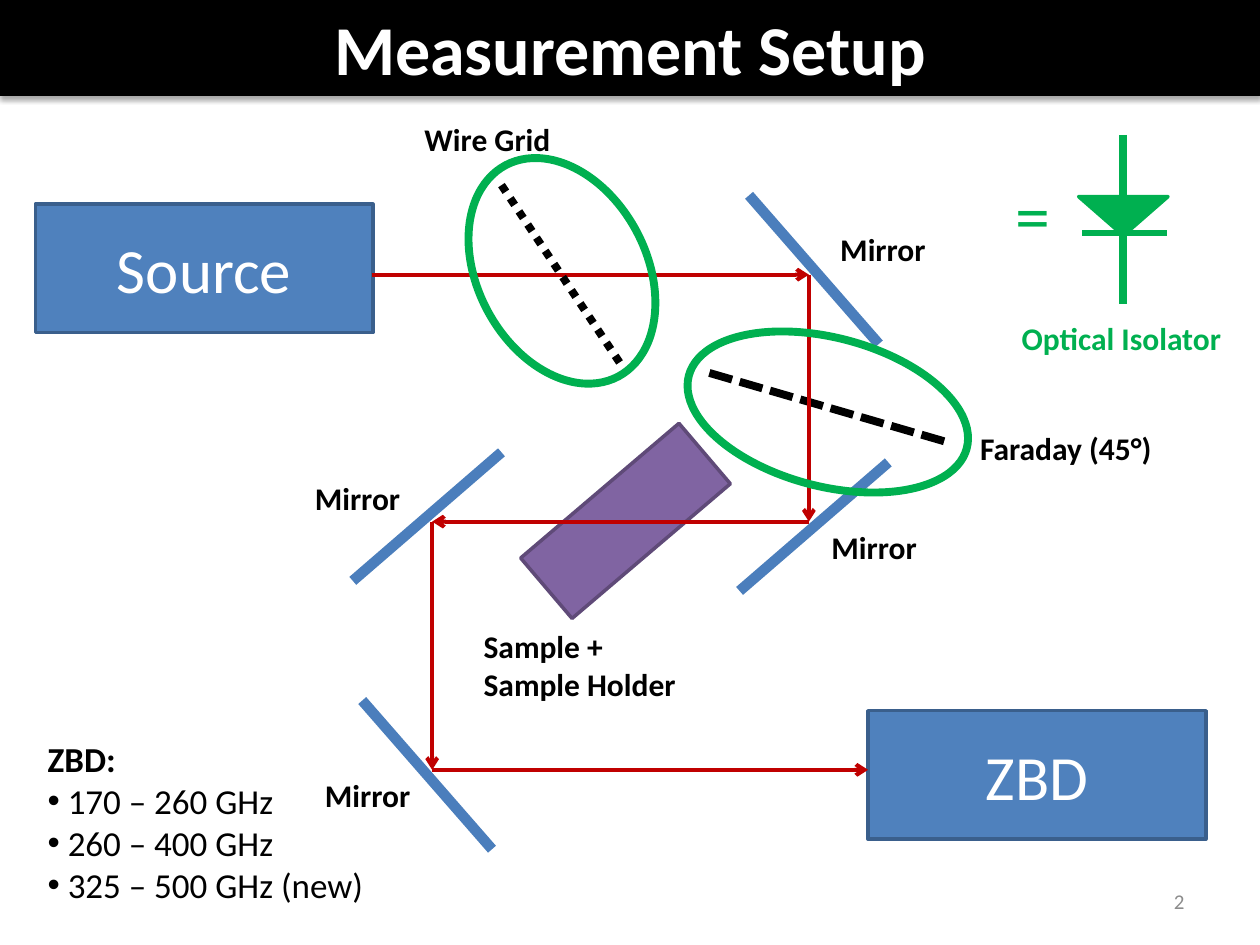
from dataclasses import dataclass

from lxml.etree import SubElement
from pptx import Presentation
from pptx.dml.color import RGBColor
from pptx.enum.dml import MSO_LINE_DASH_STYLE as DASH
from pptx.enum.shapes import MSO_CONNECTOR, MSO_SHAPE
from pptx.enum.text import MSO_ANCHOR as ANCHOR, PP_ALIGN as ALIGN
from pptx.oxml.ns import qn
from pptx.util import Inches, Pt

BLACK = RGBColor(0x00, 0x00, 0x00)
WHITE = RGBColor(0xFF, 0xFF, 0xFF)
GRAY = RGBColor(0x8C, 0x8C, 0x8C)
BLUE = RGBColor(0x4F, 0x81, 0xBD)
BLUE_EDGE = RGBColor(0x3A, 0x5F, 0x8C)
MIRROR_BLUE = RGBColor(0x4B, 0x7E, 0xBC)
PURPLE = RGBColor(0x80, 0x64, 0xA2)
PURPLE_EDGE = RGBColor(0x5F, 0x4A, 0x78)
RED = RGBColor(0xC0, 0x00, 0x00)
GREEN = RGBColor(0x00, 0xB0, 0x50)

FONT = "Calibri"
COLUMNS, ROWS = 100, 75
CELL = Inches(10) // COLUMNS


@dataclass
class Region:
    """A box on the slide grid; its parts are placed from its top left corner."""
    slide: object
    left: float
    top: float
    width: float
    height: float

    def point(self, x, y):
        return round((self.left + x) * CELL), round((self.top + y) * CELL)

    def place(self, box):
        x, y, width, height = box
        return *self.point(x, y), round(width * CELL), round(height * CELL)


def add_run(paragraph, text, size, color, bold=False):
    run = paragraph.add_run()
    run.text = text
    run.font.name, run.font.size, run.font.bold = FONT, Pt(size), bold
    run.font.color.rgb = color


def add_block(region, kind, box, fill, edge, weight=2, rotation=0):
    shape = region.slide.shapes.add_shape(kind, *region.place(box))
    shape.shadow.inherit = False
    shape.rotation = rotation
    if fill is None:
        shape.fill.background()
    else:
        shape.fill.solid()
        shape.fill.fore_color.rgb = fill
    shape.line.color.rgb = edge
    shape.line.width = Pt(weight)
    return shape


def add_caption(shape, text, size, bold=False):
    shape.text_frame.vertical_anchor = ANCHOR.MIDDLE
    paragraph = shape.text_frame.paragraphs[0]
    paragraph.alignment = ALIGN.CENTER
    add_run(paragraph, text, size, WHITE, bold)


def add_line(region, start, end, color, weight, dash=None, arrow=False):
    line = region.slide.shapes.add_connector(
        MSO_CONNECTOR.STRAIGHT, *region.point(*start), *region.point(*end))
    line.line.color.rgb = color
    line.line.width = Pt(weight)
    if dash is not None:
        line.line.dash_style = dash
    properties = line._element.spPr
    if arrow:
        SubElement(properties.find(qn("a:ln")), qn("a:tailEnd"), type="arrow")
    SubElement(properties, qn("a:effectLst"))


def add_label(region, box, lines, size=18, color=BLACK, bold=True):
    frame = region.slide.shapes.add_textbox(*region.place(box)).text_frame
    frame.word_wrap = False
    for index, text in enumerate(lines):
        paragraph = frame.add_paragraph() if index else frame.paragraphs[0]
        add_run(paragraph, text, size, color, bold)
    return frame


def build_beam_path(region):
    # Source and detector
    for text, x, y in (("Source", 0, 7.2), ("ZBD", 66.1, 47.4)):
        block = add_block(region, MSO_SHAPE.RECTANGLE, (x, y, 26.8, 10.2), BLUE, BLUE_EDGE)
        add_caption(block, text, 36)

    # The beam turns at four mirrors between source and detector
    right, left = 61.4, 31.5
    upper, middle, lower = 12.8, 32.4, 52.1
    turns = [(right, upper), (right, middle), (left, middle), (left, lower)]
    beam = [(26.7, upper), *turns, (66.1, lower)]

    # Mirrors: behind each turn, half width and half height, label corner
    falling, rising = (5.15, 5.9), (5.9, -5.1)
    mirrors = [
        ((0.4, -0.4), falling, (62.9, 8.8)),
        ((0.4, 0.4), rising, (62.2, 32.4)),
        ((-0.4, -0.4), rising, (21.2, 28.5)),
        ((-0.4, 0.4), falling, (22, 52.1)),
    ]
    for (x, y), (shift_x, shift_y), (dx, dy), corner in (
            (turn, *mirror) for turn, mirror in zip(turns, mirrors)):
        x, y = x + shift_x, y + shift_y
        add_line(region, (x - dx, y - dy), (x + dx, y + dy), MIRROR_BLUE, 6)
        add_label(region, (*corner, 8.8, 4), ["Mirror"])

    # Faraday rotator and sample lie under the beam, the wire grid over it
    add_line(region, (53.5, 20.6), (72.4, 26.1), BLACK, 4.5, DASH.DASH)
    region.slide.shapes[-1].line.dash_style = DASH.SQUARE_DOT
    region.slide.shapes[-1]._element.spPr.find(".//" + qn("a:prstDash")).set("val", "sysDash")
    add_block(region, MSO_SHAPE.RECTANGLE, (43.7, 24.1, 6.3, 16.5),
              PURPLE, PURPLE_EDGE, rotation=49.6)
    for start, end in zip(beam, beam[1:]):
        add_line(region, start, end, RED, 2.25, arrow=True)
    add_line(region, (37, 5.7), (46.4, 19.8), BLACK, 4.5, DASH.ROUND_DOT)

    # Labels
    add_label(region, (29.9, 0, 12.1, 4), ["Wire Grid"])
    add_label(region, (74, 24.6, 15.8, 4), ["Faraday (45°)"])
    add_label(region, (34.6, 40.3, 17.4, 7.1), ["Sample +", "Sample Holder"])

    # Rings around the two parts of the isolator
    for box, rotation in (((35.1, 3, 13.4, 19), 331.9), ((51.5, 17.8, 22.8, 11.8), 14.6)):
        add_block(region, MSO_SHAPE.OVAL, box, None, GREEN, 4.5, rotation)


def build_isolator_key(region):
    add_label(region, (0, 2.4, 4.8, 7.7), ["="], 40, GREEN, False)
    # Diode symbol
    add_line(region, (9.5, 0), (9.5, 13.4), GREEN, 4.5)
    add_block(region, MSO_SHAPE.ISOSCELES_TRIANGLE, (6, 4.9, 7.1, 3.1),
              GREEN, GREEN, rotation=180)
    add_line(region, (6.3, 7.8), (13, 7.8), GREEN, 3)
    add_label(region, (0.5, 14.1, 18, 4), ["Optical Isolator"], color=GREEN)


def build_title(region, text):
    bar = add_block(region, MSO_SHAPE.RECTANGLE, (0, 0, region.width, region.height),
                    BLACK, BLACK, 0.75)
    add_caption(bar, text, 40, True)
    # Soft shadow below the bar
    effects = bar._element.spPr.find(qn("a:effectLst"))
    shadow = SubElement(effects, qn("a:outerShdw"), blurRad=str(Pt(3.1)),
                        dist=str(Pt(1.8)), dir="5400000", rotWithShape="0")
    tone = SubElement(shadow, qn("a:srgbClr"), val=str(BLACK))
    SubElement(tone, qn("a:alpha"), val="35000")


def build_bands(region, heading, bands):
    frame = add_label(region, (0, 0, region.width, region.height), [heading], 20)
    for band in bands:
        paragraph = frame.add_paragraph()
        add_run(paragraph, band, 20, BLACK)
        properties = paragraph._p.get_or_add_pPr()
        properties.set("marL", str(Inches(0.16)))
        properties.set("indent", str(-Inches(0.16)))
        SubElement(properties, qn("a:buFont"), typeface="Arial")
        SubElement(properties, qn("a:buChar"), char="•")


def build_page_number(region, number):
    frame = add_label(region, (0, 0, region.width, region.height), [number], 12, GRAY, False)
    frame.word_wrap = True
    frame.vertical_anchor = ANCHOR.MIDDLE
    frame.paragraphs[0].alignment = ALIGN.RIGHT


def main():
    presentation = Presentation()
    presentation.slide_width, presentation.slide_height = COLUMNS * CELL, ROWS * CELL
    slide = presentation.slides.add_slide(presentation.slide_layouts[6])
    build_beam_path(Region(slide, 2.8, 9, 92.9, 58.4))
    build_isolator_key(Region(slide, 79.6, 10.7, 18.5, 18.1))
    build_title(Region(slide, 0, 0, COLUMNS, 7.6), "Measurement Setup")
    build_bands(Region(slide, 2.8, 58, 27.3, 14.5), "ZBD:",
                ["170 – 260 GHz", "260 – 400 GHz", "325 – 500 GHz (new)"])
    build_page_number(Region(slide, 71.7, 69.5, 23.3, 4), "2")
    presentation.save("out.pptx")


if __name__ == "__main__":
    main()
